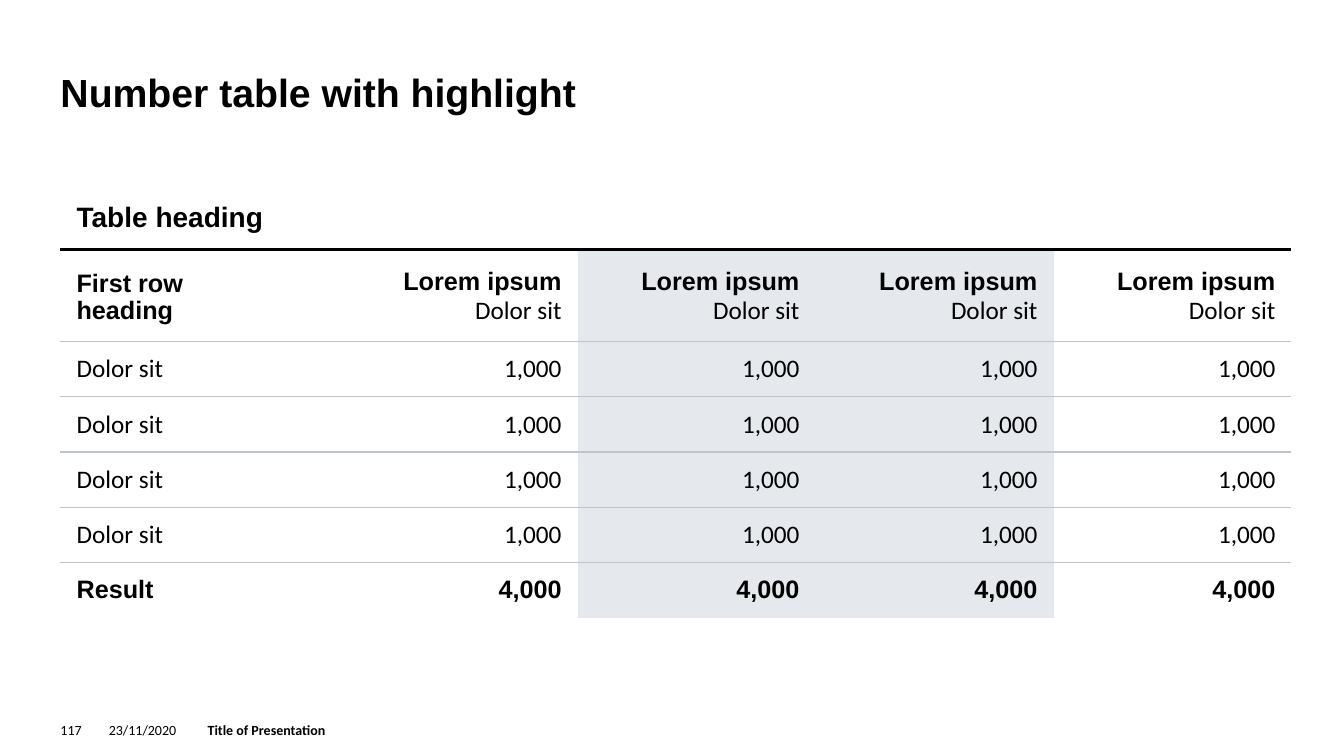
from dataclasses import dataclass

from lxml import etree
from pptx import Presentation
from pptx.dml.color import RGBColor
from pptx.enum.text import MSO_ANCHOR, PP_ALIGN
from pptx.oxml.ns import qn
from pptx.util import Emu, Pt

LEFT, RIGHT = PP_ALIGN.LEFT, PP_ALIGN.RIGHT
TOP, MIDDLE, BOTTOM = MSO_ANCHOR.TOP, MSO_ANCHOR.MIDDLE, MSO_ANCHOR.BOTTOM

PX = 9144  # 100 px to the inch
COLORS = {"text": "000000", "rule": "BDC4CA", "highlight": "E5E8ED"}
HEAD, BODY = "Arial", "Calibri"
NO_STYLE = "{2D5ABB26-0587-4C30-8999-92F81FD0307C}"


@dataclass
class Style:
    size: int
    name: str
    bold: bool = False


@dataclass
class Label:
    x: int
    w: int
    text: str
    bold: bool = False


@dataclass
class Row:
    height: int
    cells: list[str]
    styles: list[Style]  # one for each paragraph of a cell
    anchor: MSO_ANCHOR
    pad_y: int


@dataclass
class Rule:
    color: str
    width: int


TITLE = Style(28, HEAD, True)
STRONG = Style(18, HEAD, True)
PLAIN = Style(18, BODY)

# Table content
COLUMNS = [277] + [236] * 4
HIGHLIGHTED = (2, 3)
ROWS = [
    Row(57, ["Table heading"] + [""] * 4, [Style(20, HEAD, True)], BOTTOM, 16),
    Row(91, ["First row\vheading"] + ["Lorem ipsum\nDolor sit"] * 4, [STRONG, PLAIN], BOTTOM, 16),
    *[Row(55, ["Dolor sit"] + ["1,000"] * 4, [PLAIN], MIDDLE, 8) for _ in range(4)],
    Row(55, ["Result"] + ["4,000"] * 4, [STRONG], MIDDLE, 8),
]
# Rules between one row and the next
RULES = [Rule("text", 3)] + [Rule("rule", 1)] * (len(ROWS) - 2)

FOOTER = [
    Label(60, 31, "117"),
    Label(108, 87, "23/11/2020"),
    Label(206, 843, "Title of Presentation", True),
]


def px(n: int) -> Emu:
    return Emu(n * PX)


def rgb(name: str) -> RGBColor:
    return RGBColor.from_string(COLORS[name])


def set_attrs(target, values: dict) -> None:
    for key, value in values.items():
        setattr(target, key, value)


def write(tf, text: str, styles: list[Style], align: PP_ALIGN, spacing: float = 1.0) -> None:
    for i, (line, style) in enumerate(zip(text.split("\n"), styles)):
        p = tf.paragraphs[0] if i == 0 else tf.add_paragraph()
        p.text = line
        set_attrs(p, {"alignment": align, "line_spacing": spacing})
        for font in [p.font] + [r.font for r in p.runs]:
            set_attrs(font, {"size": Pt(style.size), "name": style.name, "bold": style.bold})
            font.color.rgb = rgb("text")


def format_frame(tf, anchor: MSO_ANCHOR) -> None:
    set_attrs(tf, {"margin_left": 0, "margin_top": 0, "margin_right": 0, "margin_bottom": 0,
                   "word_wrap": True, "vertical_anchor": anchor})


def add_border(cell, side: str, rule: Rule) -> None:
    tc_pr = cell._tc.get_or_add_tcPr()
    ln = etree.SubElement(tc_pr, qn(f"a:{side}"), w=str(Pt(rule.width)))
    fill = etree.SubElement(ln, qn("a:solidFill"))
    etree.SubElement(fill, qn("a:srgbClr"), val=COLORS[rule.color])


def fill_cell(cell, row_no: int, col_no: int) -> None:
    row = ROWS[row_no]
    set_attrs(cell, {"margin_left": px(16), "margin_right": px(16),
                     "margin_top": px(row.pad_y), "margin_bottom": px(row.pad_y),
                     "vertical_anchor": row.anchor})
    write(cell.text_frame, row.cells[col_no], row.styles, RIGHT if col_no else LEFT, 0.95)
    if row_no > 0:
        add_border(cell, "lnT", RULES[row_no - 1])
    if row_no < len(RULES):
        add_border(cell, "lnB", RULES[row_no])
    if row_no > 0 and col_no in HIGHLIGHTED:
        cell.fill.solid()
        cell.fill.fore_color.rgb = rgb("highlight")
    else:
        cell.fill.background()


def add_number_table(slide) -> None:
    frame = slide.shapes.add_table(len(ROWS), len(COLUMNS), px(60), px(186), px(sum(COLUMNS)),
                                   px(sum(row.height for row in ROWS)))
    table = frame.table
    set_attrs(table, {"first_row": False, "horz_banding": False})
    table._tbl.tblPr.find(qn("a:tableStyleId")).text = NO_STYLE
    for column, width in zip(table.columns, COLUMNS):
        column.width = px(width)
    for row_no, row in enumerate(ROWS):
        table.rows[row_no].height = px(row.height)
        for col_no in range(len(COLUMNS)):
            fill_cell(table.cell(row_no, col_no), row_no, col_no)
    table.cell(0, 0).merge(table.cell(0, len(COLUMNS) - 1))


def add_label(slide, label: Label) -> None:
    sp = slide.shapes.add_textbox(px(label.x), px(716), px(label.w), px(16))
    format_frame(sp.text_frame, MIDDLE)
    write(sp.text_frame, label.text, [Style(10, BODY, label.bold)], LEFT)


def main() -> None:
    prs = Presentation()
    set_attrs(prs, {"slide_width": px(1333), "slide_height": px(750)})
    slide = prs.slides.add_slide(prs.slide_layouts[5])

    # Title
    title = slide.shapes.title
    set_attrs(title, {"left": px(60), "top": px(68), "width": px(1221), "height": px(47)})
    format_frame(title.text_frame, TOP)
    write(title.text_frame, "Number table with highlight", [TITLE], LEFT)

    # Table
    add_number_table(slide)

    # Footer
    for label in FOOTER:
        add_label(slide, label)

    prs.save("out.pptx")


if __name__ == "__main__":
    main()
